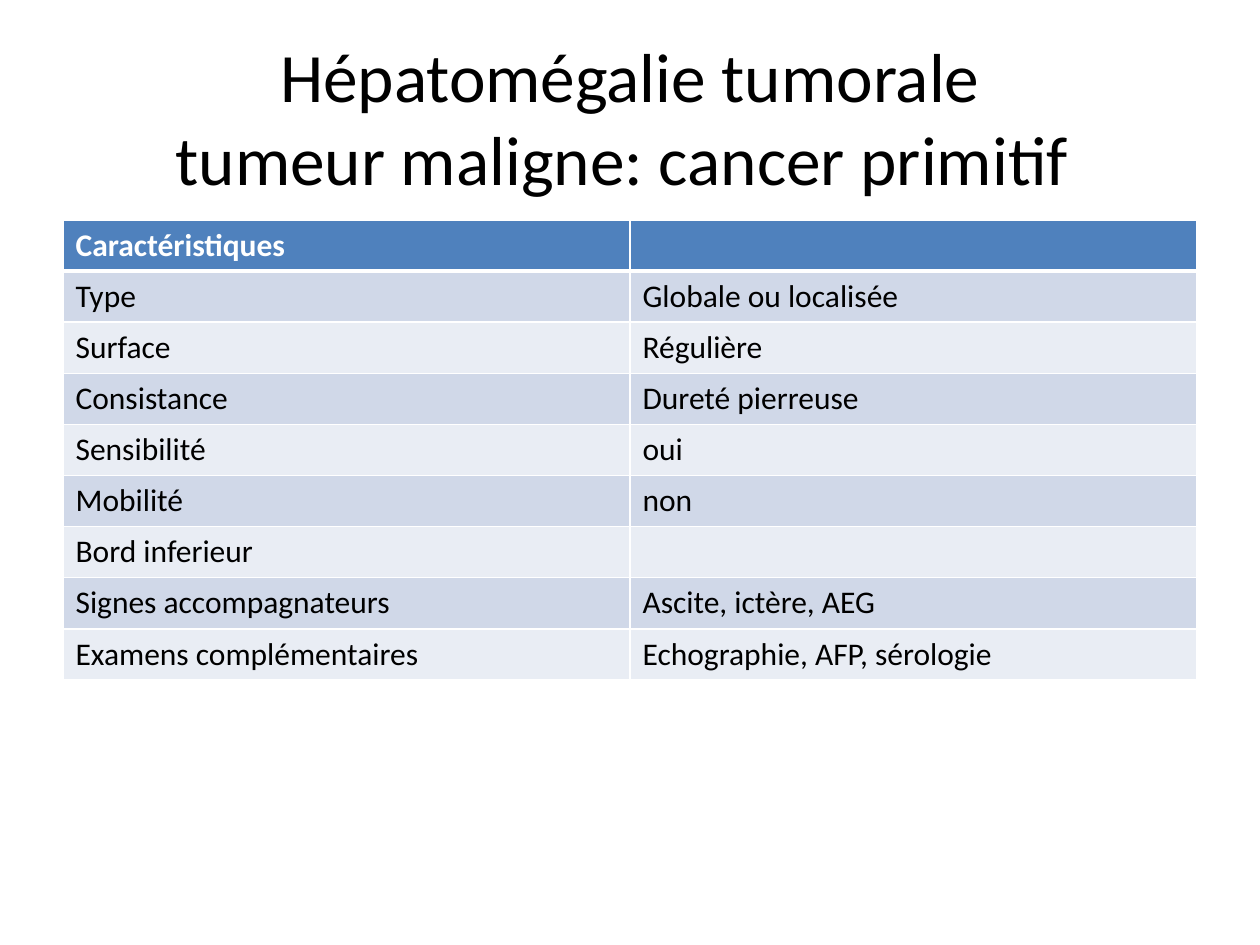
from lxml.etree import SubElement
from pptx import Presentation
from pptx.dml.color import RGBColor
from pptx.enum.text import MSO_ANCHOR, MSO_AUTO_SIZE, PP_ALIGN
from pptx.oxml.ns import qn
from pptx.util import Pt

SCALE = 914400 / 126
HUES = {"ink": "000000", "head": "4F81BD", "odd": "D0D8E8",
        "even": "E9EDF4", "white": "FFFFFF"}
TITLE = "Hépatomégalie tumorale\vtumeur maligne: cancer primitif "
ROWS = [
    ("Caractéristiques", ""),
    ("Type", "Globale ou localisée"),
    ("Surface", "Régulière"),
    ("Consistance", "Dureté pierreuse"),
    ("Sensibilité", "oui"),
    ("Mobilité", "non"),
    ("Bord inferieur", ""),
    ("Signes accompagnateurs", "Ascite, ictère, AEG"),
    ("Examens complémentaires", "Echographie, AFP, sérologie"),
]


def px(n):
    return round(n * SCALE)


def apply(item, form):
    for key, val in form.items():
        setattr(item, key, val)


def style(para, size, hue, bold=False):
    for run in para.runs:
        apply(run.font, {"name": "Calibri", "size": Pt(size), "bold": bold})
        run.font.color.rgb = RGBColor.from_string(HUES[hue])


def add_title(slide, text, box, size):
    title = slide.shapes.title
    apply(title, dict(zip(("left", "top", "width", "height"), map(px, box))))
    frame = title.text_frame
    apply(frame, {"text": text, "word_wrap": True,
                  "auto_size": MSO_AUTO_SIZE.NONE,
                  "vertical_anchor": MSO_ANCHOR.MIDDLE})
    para = frame.paragraphs[0]
    para.alignment = PP_ALIGN.CENTER
    style(para, size, "ink")
    for gap in para._p.findall(qn("a:br")):
        SubElement(gap, qn("a:rPr"), sz=str(round(size * 100)))


def add_edges(cell, sides):
    props = cell._tc.get_or_add_tcPr()
    for spot, (side, width) in enumerate(sides.items()):
        line = SubElement(props, qn(f"a:{side}"), w=str(Pt(width)))
        fill = SubElement(line, qn("a:solidFill"))
        SubElement(fill, qn("a:srgbClr"), val=HUES["white"])
        props.insert(spot, line)


def fill_cell(cell, text, row):
    hue = "head" if row == 0 else "odd" if row % 2 else "even"
    cell.text = text
    cell.fill.solid()
    cell.fill.fore_color.rgb = RGBColor.from_string(HUES[hue])
    style(cell.text_frame.paragraphs[0], 18,
          "white" if row == 0 else "ink", row == 0)
    add_edges(cell, {"lnL": 1, "lnR": 1, "lnT": 3 if row == 1 else 1,
                     "lnB": 3 if row == 0 else 1})


def add_grid(slide, rows, box):
    grid = slide.shapes.add_table(len(rows), len(rows[0]), *map(px, box)).table
    for row, texts in enumerate(rows):
        for col, text in enumerate(texts):
            fill_cell(grid.cell(row, col), text, row)


def main():
    deck = Presentation()
    apply(deck, {"slide_width": px(1260), "slide_height": px(945)})
    slide = deck.slides.add_slide(deck.slide_layouts[5])
    add_title(slide, TITLE, (63, 38, 1134, 157), 39.6)
    add_grid(slide, ROWS, (63, 220, 1134, 460))
    deck.save("out.pptx")


if __name__ == "__main__":
    main()
